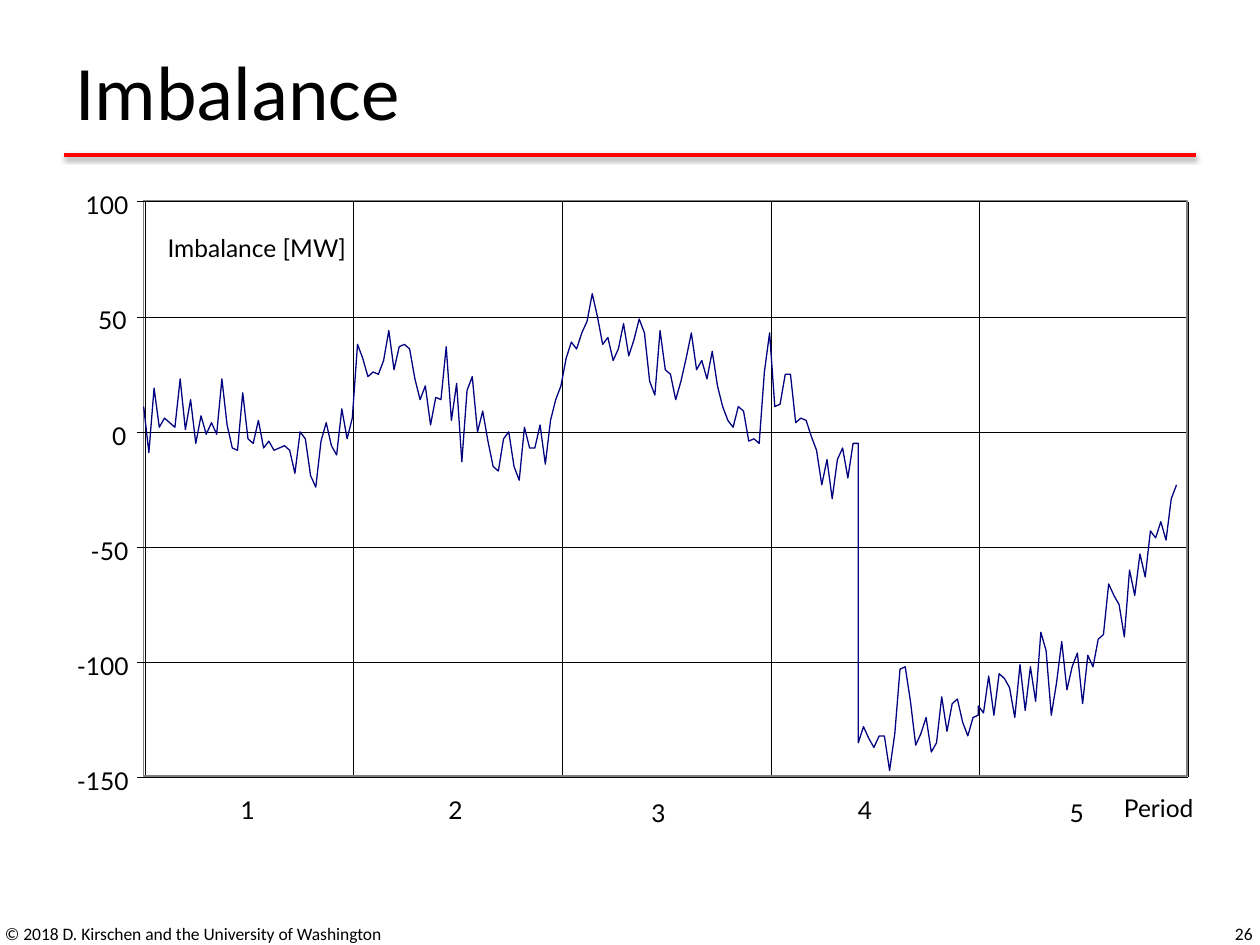
from dataclasses import dataclass

from lxml.etree import SubElement
from pptx import Presentation
from pptx.dml.color import RGBColor
from pptx.enum.shapes import MSO_CONNECTOR, MSO_SHAPE
from pptx.enum.text import MSO_ANCHOR, MSO_AUTO_SIZE, PP_ALIGN
from pptx.oxml.ns import qn
from pptx.util import Inches, Pt


@dataclass(frozen=True)
class Theme:
    """Colours, fonts, type sizes and line widths of the slide."""
    ink: RGBColor = RGBColor(0, 0, 0)
    rule: RGBColor = RGBColor(0xFF, 0, 0)
    frame: RGBColor = RGBColor(0x80, 0x80, 0x80)
    curve: RGBColor = RGBColor(0, 0, 0x80)
    text_font: str = "Calibri"
    plot_font: str = "Lato"
    title_size: int = 44
    label_size: int = 14
    footer_size: int = 10
    grid_width: float = 0.25
    outline_width: float = 0.75
    rule_width: float = 2


THEME = Theme()

PLOT_LEFT, PLOT_RIGHT, PLOT_TOP, PLOT_BOTTOM = 1.15, 9.43, 1.6, 6.17
FRAME_SHIFT = 0.01
TICK_LENGTH = 0.06
LABEL_HEIGHT, LABEL_RISE = 0.24, 0.09
DIGIT_WIDTH, MINUS_WIDTH = 0.13, 0.07

MAX_MW, MIN_MW, STEP_MW = 100, -150, 50
PERIODS = 5
SAMPLES_PER_PERIOD = 40
OUTAGE_SAMPLE = 137

LEVEL_LABEL_LEFT = {100: 0.68, 50: 0.78, 0: 0.89, -50: 0.72, -100: 0.61, -150: 0.61}
PERIOD_LABEL_PLACE = {1: (1.91, 6.31), 2: (3.56, 6.31), 3: (5.17, 6.33),
                      4: (6.81, 6.31), 5: (8.49, 6.33)}

PERIOD_1_MW = [
    11, -9, 19, 2, 6, 4, 2, 23, 1, 14, -5, 7, -1, 4, -1, 23, 3, -7, -8, 17,
    -3, -5, 5, -7, -4, -8, -7, -6, -8, -18, 0, -3, -19, -24, -4, 4, -6, -10, 10, -3]
PERIOD_2_MW = [
    6, 38, 32, 24, 26, 25, 31, 44, 27, 37, 38, 36, 23, 14, 20, 3, 15, 14, 37, 5,
    21, -13, 18, 24, 0, 9, -4, -15, -17, -3, 0, -15, -21, 2, -7, -7, 3, -14, 5, 14]
PERIOD_3_MW = [
    20, 32, 39, 36, 43, 48, 60, 50, 38, 41, 31, 36, 47, 33, 40, 49, 43, 22, 16, 44,
    27, 25, 14, 22, 32, 43, 27, 31, 23, 35, 20, 11, 5, 2, 11, 9, -4, -3, -5, 26]
PERIOD_4_BEFORE_OUTAGE_MW = [
    43, 11, 12, 25, 25, 4, 6, 5, -2, -8, -23, -12, -29, -12, -7, -20, -5, -5]
PERIOD_4_AFTER_OUTAGE_MW = [
    -135, -128, -133, -137, -132, -132, -147, -131, -103, -102, -117, -136,
    -131, -124, -139, -135, -115, -130, -118, -116, -126, -132, -124, -123]
PERIOD_5_MW = [
    -119, -122, -106, -123, -105, -107, -111, -124, -101, -121, -102, -117, -87,
    -95, -123, -109, -91, -112, -102, -96, -118, -97, -102, -90, -88, -66,
    -71, -75, -89, -60, -71, -53, -63, -43, -46, -39, -47, -29, -23]

IMBALANCE_BY_FIRST_SAMPLE = {
    0: PERIOD_1_MW,
    SAMPLES_PER_PERIOD: PERIOD_2_MW,
    2 * SAMPLES_PER_PERIOD: PERIOD_3_MW,
    3 * SAMPLES_PER_PERIOD: PERIOD_4_BEFORE_OUTAGE_MW,
    OUTAGE_SAMPLE: PERIOD_4_AFTER_OUTAGE_MW,
    4 * SAMPLES_PER_PERIOD: PERIOD_5_MW,
}


def period_x(periods_elapsed):
    """Scale elapsed periods to a horizontal position."""
    return PLOT_LEFT + periods_elapsed * (PLOT_RIGHT - PLOT_LEFT) / PERIODS


def level_y(megawatts):
    """Scale an imbalance in MW to a vertical position."""
    share = (MAX_MW - megawatts) / (MAX_MW - MIN_MW)
    return PLOT_TOP + share * (PLOT_BOTTOM - PLOT_TOP)


def write(paragraph, text, size, font):
    """Add one formatted run to a paragraph."""
    run = paragraph.add_run()
    run.text = text
    run.font.size = Pt(size)
    run.font.name = font
    run.font.color.rgb = THEME.ink


def add_line(shapes, start, end, color=THEME.ink, width=THEME.grid_width):
    """Draw a straight line and return its empty effect list."""
    line = shapes.add_connector(MSO_CONNECTOR.STRAIGHT,
                                *(Inches(v) for v in (*start, *end)))
    line.line.color.rgb = color
    line.line.width = Pt(width)
    return SubElement(line._element.spPr, qn("a:effectLst"))


def style_outline(shape, color):
    """Leave a shape unfilled with a thin outline."""
    shape.shadow.inherit = False
    shape.fill.background()
    shape.line.color.rgb = color
    shape.line.width = Pt(THEME.outline_width)


def add_title_rule(slide):
    """Draw the shadowed rule below the title."""
    effects = add_line(slide.shapes, (0.51, 1.23), (9.49, 1.23),
                       THEME.rule, THEME.rule_width)
    shadow = SubElement(effects, qn("a:outerShdw"), blurRad=str(Pt(3.1)),
                        dist=str(Pt(1.6)), dir="5400000", rotWithShape="0")
    shade = SubElement(shadow, qn("a:srgbClr"), val=str(THEME.ink))
    SubElement(shade, qn("a:alpha"), val="38000")


def fill_title(slide, text):
    """Place the title placeholder and write in it."""
    title = slide.shapes.title
    title.left, title.top = Inches(0.5), Inches(0.13)
    title.width, title.height = Inches(9), Inches(1.17)
    title.text_frame.vertical_anchor = MSO_ANCHOR.MIDDLE
    paragraph = title.text_frame.paragraphs[0]
    paragraph.alignment = PP_ALIGN.LEFT
    write(paragraph, text, THEME.title_size, THEME.text_font)


def add_footer(slide, text, left, width, alignment):
    """Write one footer entry."""
    box = slide.shapes.add_textbox(Inches(left), Inches(7.21), Inches(width), Inches(0.4))
    frame = box.text_frame
    frame.word_wrap = True
    frame.vertical_anchor = MSO_ANCHOR.MIDDLE
    frame.paragraphs[0].alignment = alignment
    write(frame.paragraphs[0], text, THEME.footer_size, THEME.text_font)


def add_label(shapes, text, left, top, width):
    """Write a plot label without margins."""
    box = shapes.add_textbox(*(Inches(v) for v in (left, top, width, LABEL_HEIGHT)))
    frame = box.text_frame
    frame.margin_left = frame.margin_right = frame.margin_top = frame.margin_bottom = 0
    frame.word_wrap = False
    frame.auto_size = MSO_AUTO_SIZE.SHAPE_TO_FIT_TEXT
    write(frame.paragraphs[0], text, THEME.label_size, THEME.plot_font)


def add_number(shapes, number, left, top):
    """Write a number in a box sized by its digits."""
    width = len(str(abs(number))) * DIGIT_WIDTH + (number < 0) * MINUS_WIDTH
    add_label(shapes, str(number), left, top, width)


def add_grid(shapes):
    """Draw the grid, its frame and the level ticks."""
    level_heights = [level_y(mw) for mw in range(MAX_MW, MIN_MW - 1, -STEP_MW)]
    for y in level_heights:
        add_line(shapes, (PLOT_LEFT, y), (PLOT_RIGHT, y))
    for boundary in range(PERIODS + 1):
        x = period_x(boundary)
        add_line(shapes, (x, PLOT_TOP), (x, PLOT_BOTTOM))
    frame = shapes.add_shape(
        MSO_SHAPE.RECTANGLE, Inches(PLOT_LEFT - FRAME_SHIFT), Inches(PLOT_TOP - FRAME_SHIFT),
        Inches(PLOT_RIGHT - PLOT_LEFT), Inches(PLOT_BOTTOM - PLOT_TOP))
    style_outline(frame, THEME.frame)
    for y in level_heights:
        add_line(shapes, (PLOT_LEFT - TICK_LENGTH, y), (PLOT_LEFT, y))


def add_curve(shapes):
    """Draw the imbalance of every sample as one open line."""
    points = [(Inches(period_x(sample / SAMPLES_PER_PERIOD) - FRAME_SHIFT),
               Inches(level_y(mw)))
              for first_sample, series in IMBALANCE_BY_FIRST_SAMPLE.items()
              for sample, mw in enumerate(series, first_sample)]
    builder = shapes.build_freeform(*points[0])
    builder.add_line_segments(points[1:], close=False)
    style_outline(builder.convert_to_shape(), THEME.curve)


def add_labels(shapes):
    """Write the level, period and axis labels."""
    for mw, left in LEVEL_LABEL_LEFT.items():
        add_number(shapes, mw, left, level_y(mw) - LABEL_RISE)
    for period, (left, top) in PERIOD_LABEL_PLACE.items():
        add_number(shapes, period, left, top)
    add_label(shapes, "Period", 8.92, 6.29, 0.58)
    add_label(shapes, "Imbalance [MW]", 1.33, 1.85, 1.5)


def main():
    """Build and save the slide."""
    deck = Presentation()
    deck.slide_width, deck.slide_height = Inches(10), Inches(7.5)
    slide = deck.slides.add_slide(deck.slide_layouts[5])
    add_title_rule(slide)
    fill_title(slide, "Imbalance")
    add_footer(slide, "© 2018 D. Kirschen and the University of Washington",
               -0.06, 3.88, PP_ALIGN.LEFT)
    add_footer(slide, "26", 7.71, 2.33, PP_ALIGN.RIGHT)
    plot = slide.shapes.add_group_shape().shapes
    add_grid(plot)
    add_curve(plot)
    add_labels(plot)
    deck.save("out.pptx")


if __name__ == "__main__":
    main()
